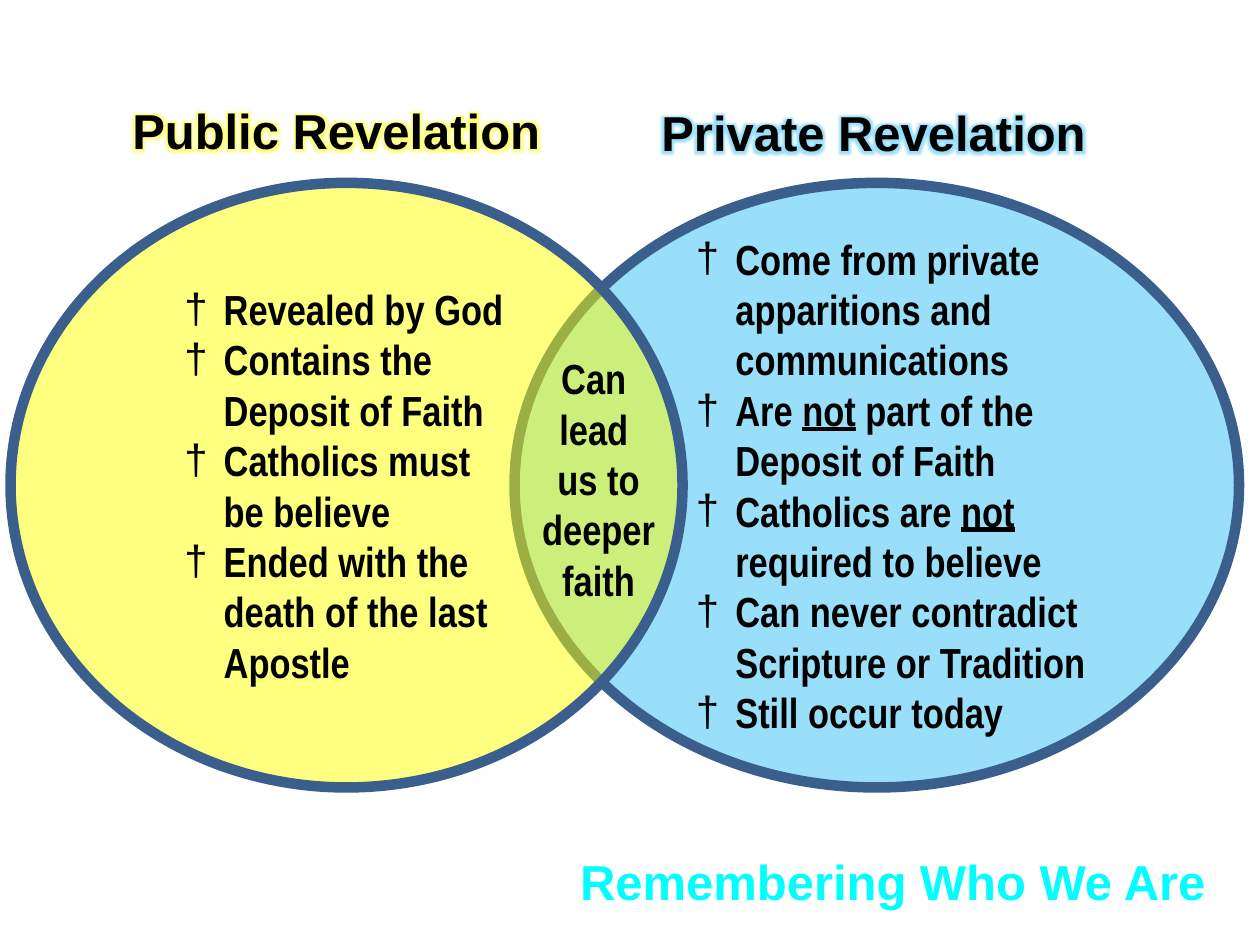
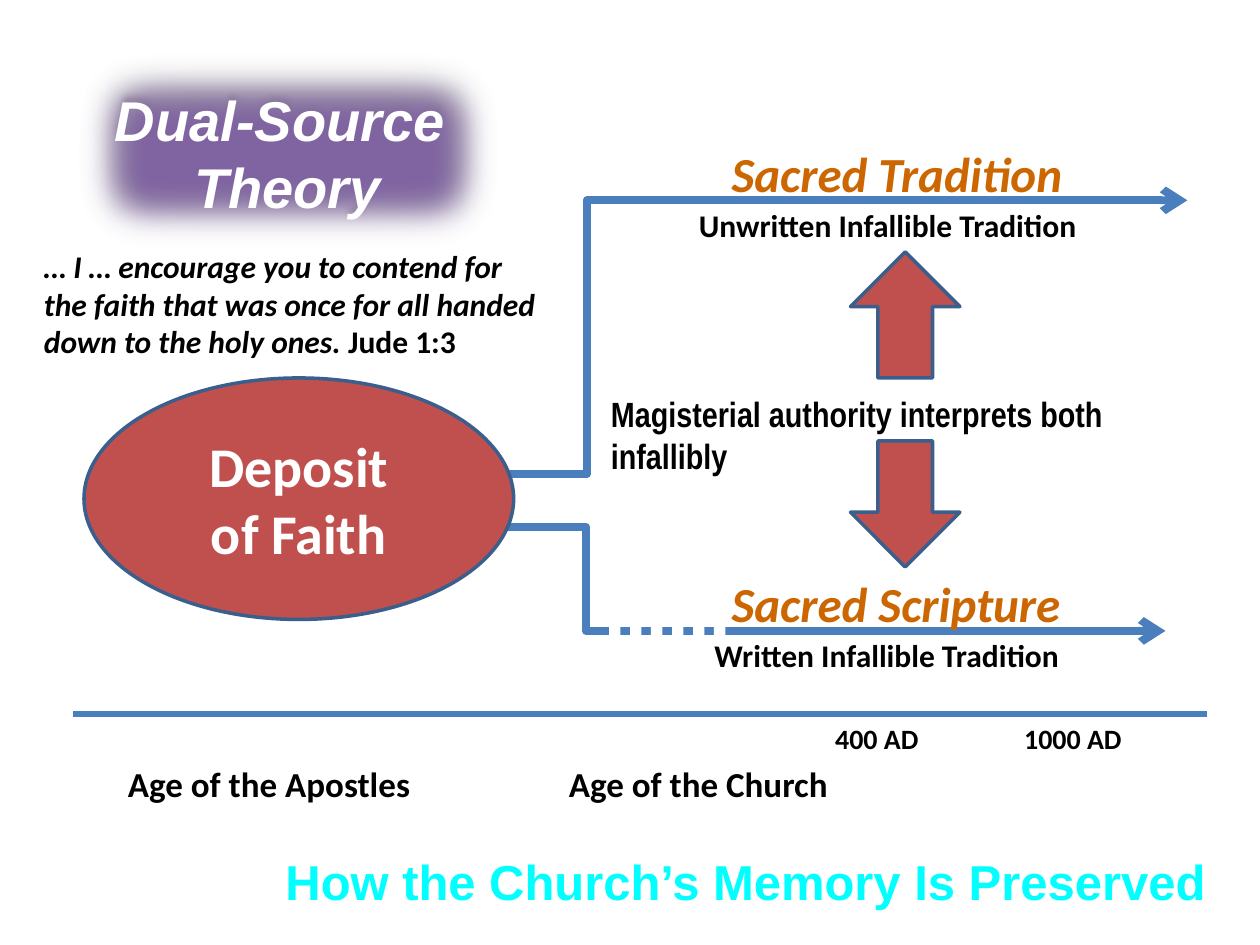
"""Build two slides on revelation and the preservation of the Church's memory."""
from dataclasses import dataclass, replace
from typing import Any, Optional, Sequence

from pptx import Presentation
from pptx.dml.color import RGBColor
from pptx.enum.shapes import MSO_CONNECTOR as Connector, MSO_SHAPE as Preset
from pptx.enum.text import MSO_ANCHOR as Anchor, MSO_AUTO_SIZE as AutoSize, PP_ALIGN as Align
from pptx.oxml import parse_xml
from pptx.oxml.ns import nsdecls, qn
from pptx.util import Pt

BLACK, WHITE, CYAN = "000000", "FFFFFF", "00FFFF"
YELLOW, SKY, RED, ORANGE = "FFFF00", "00B0F0", "C0504D", "CC6600"
PURPLE, DARK_PURPLE = "8064A2", "5F4A78"
OUTLINE, LINE = "3A5F8C", "4B7EBC"


@dataclass(frozen=True)
class Box:
    left: float
    top: float
    width: float
    height: float

    def lengths(self) -> tuple:
        return Pt(self.left), Pt(self.top), Pt(self.width), Pt(self.height)


@dataclass(frozen=True)
class Style:
    size: float
    font: str = "Calibri"
    color: str = BLACK
    align: Align = Align.LEFT
    italic: bool = False
    underline: bool = False
    bullet: str = ""
    glow: Optional[str] = None
    glow_alpha: int = 50
    outline: Optional[str] = None


@dataclass(frozen=True)
class Label:
    box: Box
    text: str
    style: Style


@dataclass(frozen=True)
class Circle:
    box: Box
    color: str
    alpha: int
    points: Sequence[str]


@dataclass(frozen=True)
class Branch:
    start: tuple
    end: tuple
    bend: int


TITLE = Style(28, "Arial", CYAN, Align.RIGHT, outline=BLACK)
HEADING = Style(28, "Arial", align=Align.CENTER)
POINTS = Style(24, "Arial Narrow", bullet="†")
SHARED = Style(24, "Arial Narrow", align=Align.CENTER)
THEORY = Style(32, "Arial", WHITE, Align.CENTER, italic=True)
DEPOSIT = Style(32, color=WHITE, align=Align.CENTER)
SOURCE = Style(28, color=ORANGE, italic=True)
CAPTION = Style(18, align=Align.CENTER)

CIRCLES = (
    Circle(Box(294, 104.5, 414, 345.5), SKY, 40, (
        "Come from private apparitions and communications",
        "Are *not* part of the Deposit of Faith",
        "Catholics are *not* required to believe",
        "Can never contradict Scripture or Tradition",
        "Still occur today")),
    Circle(Box(6, 104.5, 384, 345.5), YELLOW, 50, (
        "Revealed by God",
        "Contains the \nDeposit of Faith",
        "Catholics must \nbe believe",
        "Ended with the \ndeath of the last \nApostle")),
)
CIRCLE_LABELS = (
    Label(Box(294, 198, 96, 152.5), "Can \nlead \nus to deeper faith", SHARED),
    Label(Box(44.5, 54, 303, 41), "Public Revelation ", replace(HEADING, glow=YELLOW)),
    Label(Box(351.5, 55, 303, 41), "Private Revelation ",
          replace(HEADING, glow=SKY, glow_alpha=40)),
)
TIMELINE_LABELS = (
    Label(Box(18, 137.5, 300, 72.5),
          "… I … encourage you to contend for the faith that was once for all "
          "handed down to the holy ones. *Jude 1:3*", Style(18, italic=True)),
    Label(Box(66, 432, 623.5, 31.5), "Age of the Apostles\t\t\tAge of the Church", Style(20)),
    Label(Box(306, 409, 342, 26.5), "400 AD\t\t1000 AD", Style(16, align=Align.RIGHT)),
)
SOURCE_LABELS = (
    Label(Box(411, 78.5, 225, 41), "Sacred Tradition", SOURCE),
    Label(Box(411, 324, 225, 41), "Sacred Scripture", SOURCE),
)
CAPTION_LABELS = (
    Label(Box(366.5, 114, 281.5, 29), "Unwritten Infallible Tradition", CAPTION),
    Label(Box(366, 360, 281.5, 29), "Written Infallible Tradition", CAPTION),
    Label(Box(342, 220.5, 366, 31.5), "Magisterial authority interprets both infallibly",
          Style(20, "Arial Narrow")),
)
BRANCHES = (
    Branch((270, 301), (666, 360.5), 16400),
    Branch((270, 271), (678.5, 114.5), 16000),
)
GAP_TOPS = (345.5, 348, 348, 348, 348, 354)


def rgb(color: str) -> RGBColor:
    return RGBColor.from_string(color)


def element(markup: str) -> Any:
    tag, rest = markup[1:].split(">", 1) if "/>" not in markup.split(">", 1)[0] + ">" else (
        markup[1:].split("/>", 1)[0] + "/", "")
    name, _, attributes = tag.partition(" ")
    return parse_xml(f"<{name.rstrip('/')} {nsdecls('a')} {attributes}" +
                     ("/>" if tag.endswith("/") and not attributes else f">{rest}"))


def solid(color: str, alpha: int = 100) -> str:
    return f'<a:srgbClr val="{color}"><a:alpha val="{alpha * 1000}"/></a:srgbClr>'


def effects(content: str = "") -> Any:
    return parse_xml(f"<a:effectLst {nsdecls('a')}>{content}</a:effectLst>")


def add_run(paragraph: Any, text: str, style: Style) -> None:
    run = paragraph.add_run()
    run.text = text
    font = run.font
    font.size, font.name, font.bold = Pt(style.size), style.font, True
    font.italic, font.underline = style.italic, style.underline
    font.color.rgb = rgb(style.color)
    properties = run._r.get_or_add_rPr()
    if style.glow:
        glow = f'<a:glow rad="{Pt(8)}">{solid(style.glow, style.glow_alpha)}</a:glow>'
        properties.find(qn("a:solidFill")).addnext(effects(glow))
    if style.outline:
        properties.insert(0, parse_xml(
            f'<a:ln {nsdecls("a")} w="{Pt(0.5)}"><a:solidFill>'
            f'{solid(style.outline)}</a:solidFill></a:ln>'))


def add_bullet(paragraph: Any, bullet: str) -> None:
    paragraph.level = 1
    properties = paragraph._p.get_or_add_pPr()
    properties.set("marL", str(Pt(58.5)))
    properties.set("indent", str(Pt(-22.5)))
    properties.append(parse_xml(f'<a:buFont {nsdecls("a")} typeface="Arial"/>'))
    properties.append(parse_xml(f'<a:buChar {nsdecls("a")} char="{bullet}"/>'))


def write(frame: Any, texts: Sequence[str], style: Style, anchor: Anchor = Anchor.TOP) -> None:
    frame.word_wrap, frame.vertical_anchor = True, anchor
    marked = replace(style, italic=False, underline=not style.italic)
    for index, text in enumerate(texts):
        paragraph = frame.add_paragraph() if index else frame.paragraphs[0]
        paragraph.alignment = style.align
        if style.bullet:
            add_bullet(paragraph, style.bullet)
        for part, piece in enumerate(text.split("*")):
            for row, line in enumerate(piece.split("\n")):
                if row:
                    paragraph.add_line_break()
                if line:
                    add_run(paragraph, line, marked if part % 2 else style)


def add_labels(slide: Any, labels: Sequence[Label]) -> None:
    for label in labels:
        frame = slide.shapes.add_textbox(*label.box.lengths()).text_frame
        write(frame, [label.text], label.style)
        frame.auto_size = AutoSize.SHAPE_TO_FIT_TEXT


def add_shape(slide: Any, preset: Preset, box: Box, fill: str, line: Optional[str] = None,
              weight: float = 2, alpha: int = 100) -> Any:
    shape = slide.shapes.add_shape(preset, *box.lengths())
    shape.shadow.inherit = False
    shape.fill.solid()
    shape.fill.fore_color.rgb = rgb(fill)
    if alpha < 100:
        color = shape._element.spPr.find(qn("a:solidFill"))[0]
        color.append(parse_xml(f'<a:alpha {nsdecls("a")} val="{alpha * 1000}"/>'))
    if line:
        shape.line.color.rgb = rgb(line)
        shape.line.width = Pt(weight)
    else:
        shape.line.fill.background()
    return shape


def add_line(slide: Any, kind: Connector, start: tuple, end: tuple, weight: float) -> Any:
    connector = slide.shapes.add_connector(kind, *(Pt(value) for value in start + end))
    connector.line.color.rgb = rgb(LINE)
    connector.line.width = Pt(weight)
    connector._element.spPr.append(effects())
    return connector


def add_branch(slide: Any, branch: Branch) -> None:
    connector = add_line(slide, Connector.ELBOW, branch.start, branch.end, 4.5)
    properties = connector._element.spPr
    properties.find(qn("a:ln")).append(parse_xml(f'<a:tailEnd {nsdecls("a")} type="arrow"/>'))
    geometry = properties.find(qn("a:prstGeom"))
    for child in list(geometry):
        geometry.remove(child)
    geometry.append(parse_xml(
        f'<a:avLst {nsdecls("a")}><a:gd name="adj1" fmla="val {branch.bend}"/></a:avLst>'))


def add_slide(presentation: Any, title: str, left: float) -> Any:
    slide = presentation.slides.add_slide(presentation.slide_layouts[5])
    shape = slide.shapes.title
    shape.left, shape.top, shape.width, shape.height = Box(left, 483, 696 - left, 63.5).lengths()
    write(shape.text_frame, [title], TITLE)
    shape.text_frame.auto_size = AutoSize.NONE
    return slide


def build_revelation(presentation: Any) -> None:
    slide = add_slide(presentation, "Remembering Who We Are", 294)
    for circle in CIRCLES:
        shape = add_shape(slide, Preset.OVAL, circle.box, circle.color, OUTLINE, 6, circle.alpha)
        write(shape.text_frame, circle.points, POINTS, Anchor.MIDDLE)
    add_labels(slide, CIRCLE_LABELS)


def build_memory(presentation: Any) -> None:
    slide = add_slide(presentation, "How the Church’s Memory Is Preserved", 27)
    theory = add_shape(slide, Preset.RECTANGLE, Box(36, 24, 257, 126), PURPLE, DARK_PURPLE)
    properties = theory._element.spPr
    properties.replace(properties.find(qn("a:effectLst")), effects(
        f'<a:outerShdw blurRad="{Pt(4)}" dist="{Pt(3)}" dir="16200000">{solid(BLACK, 40)}'
        f'</a:outerShdw><a:softEdge rad="{Pt(25)}"/>'))
    write(theory.text_frame, ["Dual-Source \nTheory"], THEORY, Anchor.MIDDLE)
    add_line(slide, Connector.STRAIGHT, (42, 408), (690, 408), 3)
    add_labels(slide, TIMELINE_LABELS)
    for branch in BRANCHES:
        add_branch(slide, branch)
    add_labels(slide, SOURCE_LABELS)
    for index, top in enumerate(GAP_TOPS):
        add_shape(slide, Preset.RECTANGLE, Box(348 + 12 * index, top, 6.5, 26.5), WHITE)
    add_labels(slide, CAPTION_LABELS)
    deposit = add_shape(slide, Preset.OVAL, Box(48, 216, 245.5, 138), RED, OUTLINE)
    write(deposit.text_frame, ["Deposit", "of Faith"], DEPOSIT, Anchor.MIDDLE)
    for top, flipped in ((252, False), (144, True)):
        arrow = add_shape(slide, Preset.DOWN_ARROW, Box(486, top, 62.5, 72), RED, OUTLINE)
        if flipped:
            arrow._element.spPr.find(qn("a:xfrm")).set("flipV", "1")


def main() -> None:
    presentation = Presentation()
    presentation.slide_width, presentation.slide_height = Pt(720), Pt(540)
    build_revelation(presentation)
    build_memory(presentation)
    presentation.save("out.pptx")


if __name__ == "__main__":
    main()
